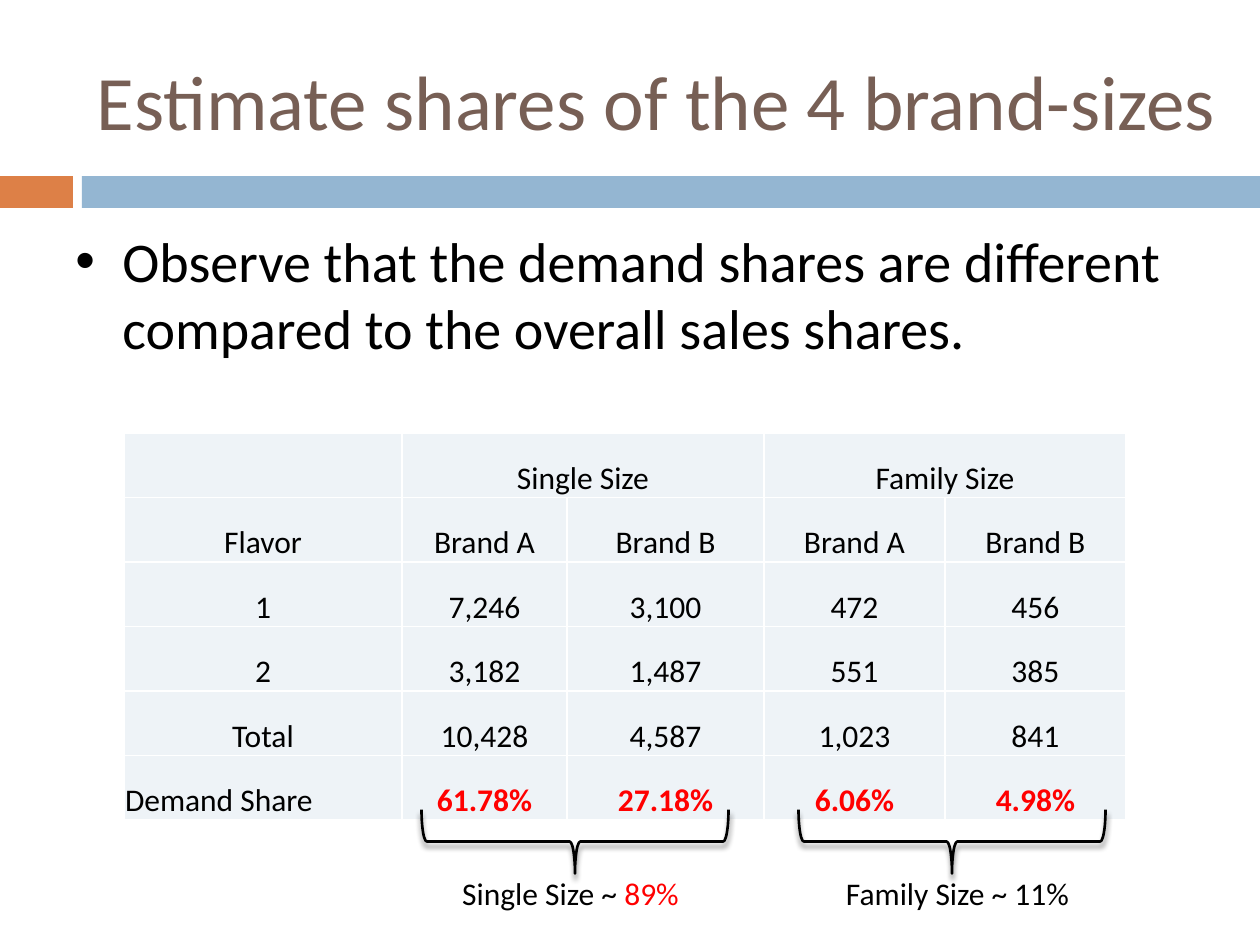
from lxml.etree import SubElement
from pptx import Presentation
from pptx.dml.color import RGBColor
from pptx.enum.shapes import MSO_SHAPE as Shape
from pptx.enum.text import MSO_ANCHOR as Anchor, PP_ALIGN as Align
from pptx.oxml import parse_xml
from pptx.oxml.ns import nsdecls, qn
from pptx.util import Emu, Pt

SCALE = 914400 / 126
FONT = "Calibri"
BLACK, RED, WHITE = "000000", "FF0000", "FFFFFF"
BROWN, ORANGE, BLUE, PALE = "775F55", "DD8047", "94B6D2", "EEF3F7"

COLUMN_WIDTHS = [278, 165, 197, 181, 181]
ROWS = [
    ["", "Single Size", "", "Family Size", ""],
    ["Flavor", "Brand A", "Brand B", "Brand A", "Brand B"],
    ["1", "7,246", "3,100", "472", "456"],
    ["2", "3,182", "1,487", "551", "385"],
    ["Total", "10,428", "4,587", "1,023", "841"],
    ["Demand Share", "61.78%", "27.18%", "6.06%", "4.98%"],
]


def px(length):
    return Emu(round(length * SCALE))


def place(*lengths):
    return [px(length) for length in lengths]


def color(code):
    return RGBColor.from_string(code)


def add_run(para, text, size, code=BLACK, bold=False):
    span = para.add_run()
    span.text = text
    span.font.name = FONT
    span.font.size = Pt(size)
    span.font.bold = bold
    span.font.color.rgb = color(code)


def add_title(page, text):
    title = page.shapes.title
    title.left, title.top, title.width, title.height = place(84, 32, 1176, 136)
    title.text_frame.vertical_anchor = Anchor.MIDDLE
    para = title.text_frame.paragraphs[0]
    para.alignment = Align.LEFT
    add_run(para, text, 44, BROWN)


def add_bar(page, left, width, code):
    bar = page.shapes.add_shape(Shape.RECTANGLE, *place(left, 176, width, 32))
    bar.shadow.inherit = False
    bar.fill.solid()
    bar.fill.fore_color.rgb = color(code)
    bar.line.fill.background()


def add_text_box(page, *area):
    box = page.shapes.add_textbox(*place(*area))
    box.text_frame.word_wrap = True
    return box.text_frame.paragraphs[0]


def add_bullet(page, text):
    para = add_text_box(page, 63, 220, 1134, 624)
    para.space_before = Pt(6)
    properties = para._p.get_or_add_pPr()
    properties.set("marL", str(px(47)))
    properties.set("indent", str(px(-47)))
    SubElement(properties, qn("a:buFont"), typeface="Arial")
    SubElement(properties, qn("a:buChar"), char="•")
    add_run(para, text, 32)


def style_cell(cell):
    properties = cell._tc.get_or_add_tcPr()
    for side in "LRTB":
        properties.append(parse_xml(
            f'<a:ln{side} {nsdecls("a")} w="{Pt(1)}"><a:solidFill>'
            f'<a:srgbClr val="{WHITE}"/></a:solidFill></a:ln{side}>'))
    cell.fill.solid()
    cell.fill.fore_color.rgb = color(PALE)
    cell.vertical_anchor = Anchor.BOTTOM
    cell.margin_left = cell.margin_right = cell.margin_top = px(1)
    cell.margin_bottom = 0


def add_share_table(page):
    area = place(124, 433, sum(COLUMN_WIDTHS), 387)
    table = page.shapes.add_table(len(ROWS), len(COLUMN_WIDTHS), *area).table
    for column, width in zip(table.columns, COLUMN_WIDTHS):
        column.width = px(width)
    for first in (1, 3):
        table.cell(0, first).merge(table.cell(0, first + 1))
    for r, row in enumerate(ROWS):
        for c, text in enumerate(row):
            cell = table.cell(r, c)
            style_cell(cell)
            if text:
                para = cell.text_frame.paragraphs[0]
                share = text.endswith("%")
                label = text == "Demand Share"
                para.alignment = Align.LEFT if label else Align.CENTER
                add_run(para, text, 18, RED if share else BLACK, share)


def add_brace(page, left):
    brace = page.shapes.add_shape(Shape.LEFT_BRACE, *place(left, 688, 64, 307))
    brace.rotation = 270
    brace.fill.background()
    brace.line.color.rgb = color(BLACK)
    brace.line.width = Pt(1.5)
    brace._element.spPr.append(parse_xml(
        f'<a:effectLst {nsdecls("a")}><a:outerShdw blurRad="{Pt(3)}" '
        f'dist="{Pt(2.4)}" dir="5400000" rotWithShape="0">'
        f'<a:srgbClr val="{BLACK}"><a:alpha val="45000"/></a:srgbClr>'
        '</a:outerShdw></a:effectLst>'))


def add_caption(page, left, *spans):
    para = add_text_box(page, left, 868, 357, 50)
    para.alignment = Align.CENTER
    for text, code in spans:
        add_run(para, text, 18, code)


def main():
    deck = Presentation()
    deck.slide_width, deck.slide_height = place(1260, 945)
    page = deck.slides.add_slide(deck.slide_layouts[5])
    add_bar(page, 0, 73, ORANGE)
    add_bar(page, 82, 1178, BLUE)
    add_title(page, "Estimate shares of the 4 brand-sizes")
    add_share_table(page)
    add_bullet(page, "Observe that the demand shares are different "
                     "compared to the overall sales shares.")
    add_caption(page, 392, ("Single Size ~ ", BLACK), ("89%", RED))
    add_caption(page, 779, ("Family Size ~ 11%", BLACK))
    for left in (543, 920):
        add_brace(page, left)
    deck.save("out.pptx")


if __name__ == "__main__":
    main()
